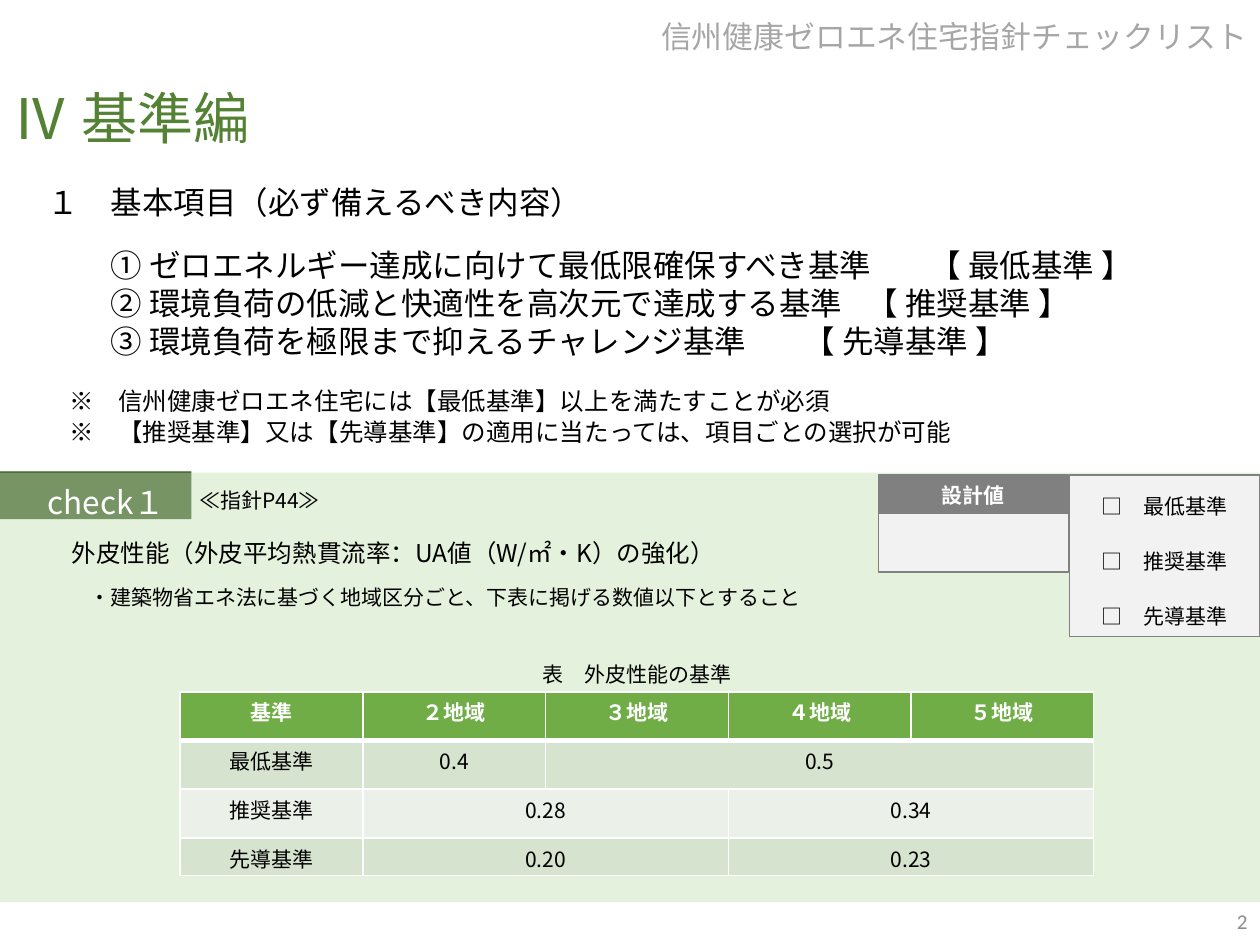
from lxml.etree import SubElement
from pptx import Presentation
from pptx.dml.color import RGBColor
from pptx.enum.shapes import MSO_SHAPE
from pptx.enum.text import MSO_ANCHOR, PP_ALIGN
from pptx.oxml.ns import qn
from pptx.util import Inches, Pt

JP = "Noto Sans CJK JP"
COLS, ROWS = 100, 75
LEFT, CENTER, RIGHT = PP_ALIGN.LEFT, PP_ALIGN.CENTER, PP_ALIGN.RIGHT
TOP, MIDDLE = MSO_ANCHOR.TOP, MSO_ANCHOR.MIDDLE


def rgb(value):
    return RGBColor.from_string(value)


def solid(parent, value):
    SubElement(SubElement(parent, qn("a:solidFill")), qn("a:srgbClr")).set("val", value)


def para(text, size=12, color="000000", indent=0, tabs=(), font=JP, bold=False, **fmt):
    """Describe a paragraph; fmt holds paragraph attributes."""
    return dict(text=text, indent=indent, tabs=tabs, color=color, fmt=fmt,
                font=dict(size=Pt(size), name=font, bold=bold))


class Deck:
    """Holds the style, the grid and the current slide."""

    def __init__(self):
        self.prs = Presentation()
        self.prs.slide_width, self.prs.slide_height = Inches(10), Inches(7.5)
        self.s = self.prs.slides.add_slide(self.prs.slide_layouts[5])

    def x(self, cols):
        return int(self.prs.slide_width * cols / COLS)

    def y(self, rows):
        return int(self.prs.slide_height * rows / ROWS)

    def box(self, left, top, width, height):
        return self.x(left), self.y(top), self.x(width), self.y(height)

    def put_text(self, tf, paras, anchor=TOP):
        tf.word_wrap = True
        tf.vertical_anchor = anchor
        for i, item in enumerate(paras):
            p = tf.add_paragraph() if i else tf.paragraphs[0]
            for name, value in item["fmt"].items():
                setattr(p, name, value)
            pPr = p._p.get_or_add_pPr()
            pPr.set("marL", str(self.x(item["indent"])))
            pPr.set("indent", "0")
            if item["tabs"]:
                stops = SubElement(pPr, qn("a:tabLst"))
                for stop in item["tabs"]:
                    tab = SubElement(stops, qn("a:tab"))
                    tab.set("pos", str(self.x(stop)))
                    tab.set("algn", "l")
            r = p.add_run()
            r.text = item["text"]
            for name, value in item["font"].items():
                setattr(r.font, name, value)
            r.font.color.rgb = rgb(item["color"])
            SubElement(r._r.get_or_add_rPr(), qn("a:ea")).set("typeface", JP)

    def title(self, area, item):
        sp = self.s.shapes.title
        sp.left, sp.top, sp.width, sp.height = self.box(*area)
        self.put_text(sp.text_frame, [item], MIDDLE)

    def text(self, area, *paras, anchor=TOP):
        sp = self.s.shapes.add_textbox(*self.box(*area))
        self.put_text(sp.text_frame, paras, anchor)

    def rect(self, area, fill, *paras, line=None, opacity=None, anchor=TOP):
        sp = self.s.shapes.add_shape(MSO_SHAPE.RECTANGLE, *self.box(*area))
        sp.shadow.inherit = False
        sp.fill.solid()
        sp.fill.fore_color.rgb = rgb(fill)
        if opacity:
            clr = sp._element.spPr.find(qn("a:solidFill"))[0]
            SubElement(clr, qn("a:alpha")).set("val", str(opacity * 1000))
        if line:
            sp.line.color.rgb = rgb(line)
            sp.line.width = Pt(0.75)
        else:
            sp.line.fill.background()
        self.put_text(sp.text_frame, paras, anchor)

    def cell(self, cell, value, fill, header):
        cell.margin_top, cell.margin_bottom = Inches(0.08), Inches(0.02)
        tcPr = cell._tc.get_or_add_tcPr()
        for side in ("L", "R", "T", "B"):
            ln = SubElement(tcPr, qn("a:ln" + side))
            ln.set("w", str(Pt(3 if header and side == "B" else 1)))
            solid(ln, "FFFFFF")
        cell.fill.solid()
        cell.fill.fore_color.rgb = rgb(fill)
        if value:
            color = "FFFFFF" if header else "000000"
            self.put_text(cell.text_frame, [para(value, color=color, bold=header,
                                                 alignment=CENTER, line_spacing=Pt(14.4))])

    def table(self, area, rows, heights, fills):
        """Build a table; None in a row continues the cell to its left."""
        n = len(rows[0])
        tbl = self.s.shapes.add_table(len(rows), n, *self.box(*area)).table
        tbl.first_row = tbl.horz_banding = False
        for col in tbl.columns:
            col.width = self.x(area[2] / n)
        for i, (row, height, fill) in enumerate(zip(rows, heights, fills)):
            tbl.rows[i].height = self.y(height)
            for j, value in enumerate(row):
                self.cell(tbl.cell(i, j), value, fill, i == 0)
            starts = [j for j, value in enumerate(row) if value] + [n]
            for first, after in zip(starts, starts[1:]):
                if after - first > 1:
                    tbl.cell(i, first).merge(tbl.cell(i, after - 1))


def main():
    d = Deck()
    d.rect((0, 37.4, 15.2, 3.8), "385723")
    d.rect((0, 37.5, 100, 34.1), "C5E0B4", opacity=45)
    d.title((0, 6.2, 100, 6.8), para("Ⅳ 基準編", 32, "548235", alignment=LEFT, line_spacing=0.9))
    d.text((0, 0, 100, 6.1), para("信州健康ゼロエネ住宅指針チェックリスト", 17.6, "A6A6A6",
                                  alignment=RIGHT, line_spacing=0.9), anchor=MIDDLE)

    levels = ["最低基準", "推奨基準", "先導基準"]
    goals = ["① ゼロエネルギー達成に向けて最低限確保すべき基準",
             "② 環境負荷の低減と快適性を高次元で達成する基準",
             "③ 環境負荷を極限まで抑えるチャレンジ基準"]
    notes = ["※　信州健康ゼロエネ住宅には【最低基準】以上を満たすことが必須",
             "※　【推奨基準】又は【先導基準】の適用に当たっては、項目ごとの選択が可能"]
    big, small = Pt(21.7), Pt(17.7)
    d.text((2.8, 14, 97, 22),
           para("１　基本項目（必ず備えるべき内容）", 18, line_spacing=big),
           *[para(f"\t{goal}\t【 {level} 】", 18, tabs=(3.1, 71.5), line_spacing=big,
                  space_before=Pt(0 if i else 14.5))
             for i, (goal, level) in enumerate(zip(goals, levels))],
           *[para(note, 14, indent=1.7, line_spacing=small, space_before=Pt(0 if i else 14))
             for i, note in enumerate(notes)])

    gap = Pt(10)
    d.text((2.8, 37.8, 86.4, 12.6),
           para("check１", 18, "FFFFFF", line_spacing=big),
           para("外皮性能（外皮平均熱貫流率：UA値（W/㎡・K）の強化）", 14, indent=1.9,
                line_spacing=Pt(17), space_before=gap),
           para("・建築物省エネ法に基づく地域区分ごと、下表に掲げる数値以下とすること", indent=3.3,
                line_spacing=Pt(14), space_before=gap))
    d.text((14, 38.2, 13.2, 3), para("≪指針P44≫", alignment=CENTER), anchor=MIDDLE)

    d.text((34.1, 52, 32.9, 3), para("表　外皮性能の基準", alignment=CENTER), anchor=MIDDLE)
    d.table((14.3, 54.9, 72.5, 14.6),
            [["基準", "２地域", "３地域", "４地域", "５地域"],
             [levels[0], "0.4", "0.5", None, None],
             [levels[1], "0.28", None, "0.34", None],
             [levels[2], "0.20", None, "0.23", None]],
            [3.87, 3.87, 3.87, 3],
            ["70AD47", "D5E3CF", "EBF1E9", "D5E3CF"])

    d.rect((84.9, 37.7, 15.1, 12.8), "F2F2F2",
           *[para(f"□　{level}", alignment=CENTER, line_spacing=Pt(21.4),
                  space_before=gap if i else Pt(0)) for i, level in enumerate(levels)],
           line="808080")
    d.rect((69.7, 37.7, 15.1, 7.7), "F2F2F2", line="808080")
    d.rect((69.7, 37.8, 15.1, 3), "808080",
           para("設計値", color="FFFFFF", font="Calibri", bold=True, alignment=CENTER),
           anchor=MIDDLE)
    d.text((77.5, 71.1, 22.5, 4), para("2", color="8C8C8C", font="Calibri", alignment=RIGHT),
           anchor=MIDDLE)
    d.prs.save("out.pptx")


if __name__ == "__main__":
    main()
